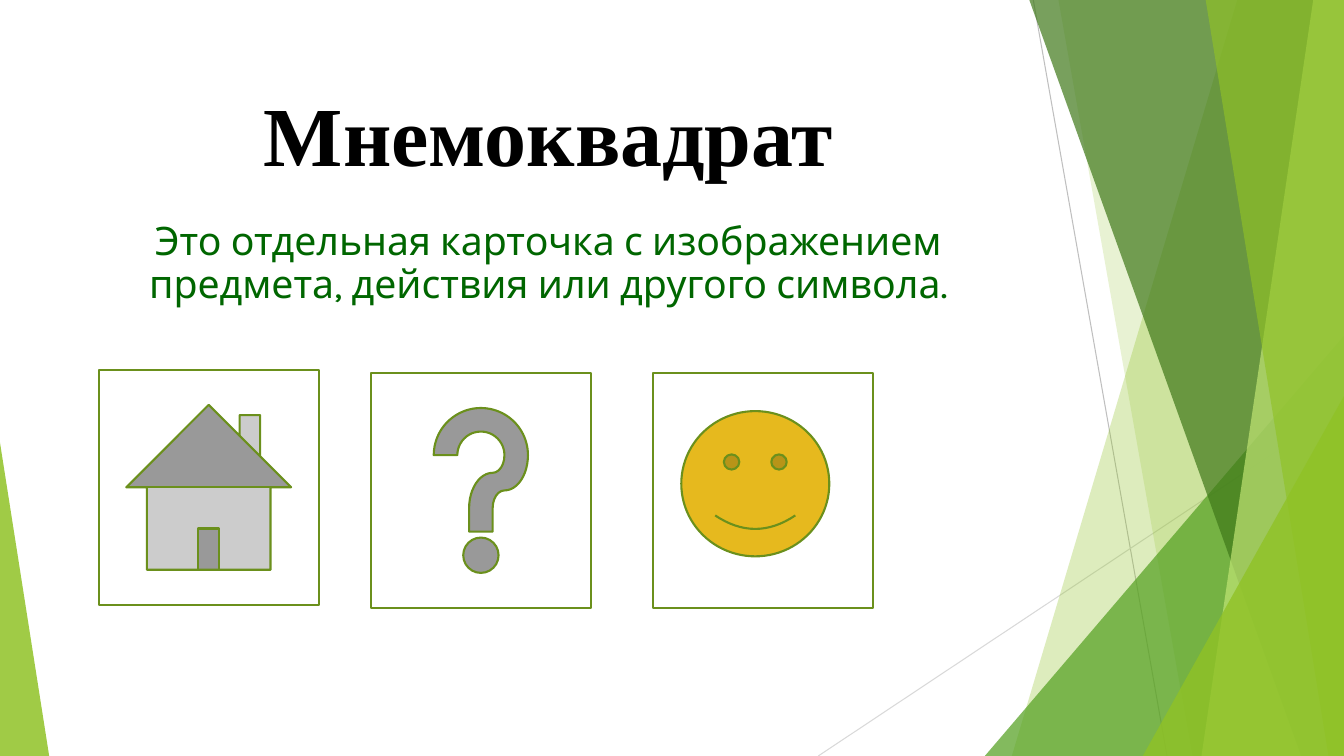
from dataclasses import dataclass

from lxml import etree
from pptx import Presentation
from pptx import util as u
from pptx.dml import color
from pptx.enum import shapes, text
from pptx.oxml import ns
from pptx.shapes.autoshape import Shape
from pptx.slide import Slide

WIDTH, HEIGHT = 33.87, 19.05
TOP = -0.03
COLORS = {
    "white": "FFFFFF",
    "black": "000000",
    "dark_green": "006600",
    "outline": "6B901C",
    "yellow": "E6B91E",
    "lime": "90C226",
    "leaf": "54A021",
    "forest": "3F7819",
    "pale": "C0E474",
    "gray": "BFBFBF",
    "light_gray": "D9D9D9",
}


@dataclass
class Ray:
    start: tuple[float, float]
    end: tuple[float, float]
    color: str


@dataclass
class Panel:
    top_x: float
    bottom_x: float
    color: str
    opacity: int


@dataclass
class Wedge:
    left: float
    top: float
    width: float
    apex: float
    color: str
    opacity: int


@dataclass
class Symbol:
    kind: shapes.MSO_SHAPE
    left: float
    top: float
    width: float
    height: float
    color: str


RAYS = [
    Ray((26.04, 0), (29.41, HEIGHT), "gray"),
    Ray((WIDTH, 10.24), (20.62, HEIGHT), "light_gray"),
]
FACETS = [
    Panel(31.19, 25.5, "lime", 30),
    Panel(26.67, 30.05, "lime", 20),
    Wedge(24.82, 8.46, 9.05, 1, "leaf", 72),
    Panel(25.93, 32.79, "forest", 70),
    Panel(33.1, 30.28, "pale", 70),
    Panel(30.38, 33.48, "lime", 65),
    Wedge(28.8, 9.98, 5.07, 1, "lime", 80),
    Wedge(0, 11.15, 1.24, 0, "lime", 85),
]
CARD_SIZE = (5.54, 5.92)
SYMBOLS = [
    Symbol(shapes.MSO_SHAPE.ACTION_BUTTON_HOME, 2.49, 9.32, *CARD_SIZE, "white"),
    Symbol(shapes.MSO_SHAPE.ACTION_BUTTON_HELP, 9.35, 9.4, *CARD_SIZE, "white"),
    Symbol(shapes.MSO_SHAPE.ACTION_BUTTON_CUSTOM, 16.46, 9.4, *CARD_SIZE, "white"),
    Symbol(shapes.MSO_SHAPE.SMILEY_FACE, 17.17, 10.36, 3.73, 3.66, "yellow"),
]


def rgb(name: str) -> color.RGBColor:
    return color.RGBColor.from_string(COLORS[name])


def paint(shape: Shape, fill: str, opacity: int = 100) -> None:
    shape.shadow.inherit = False
    shape.fill.solid()
    shape.fill.fore_color.rgb = rgb(fill)
    if opacity < 100:
        tint = shape.element.spPr.find(".//" + ns.qn("a:srgbClr"))
        etree.SubElement(tint, ns.qn("a:alpha"), val=str(opacity * 1000))
    shape.line.fill.background()


def draw_ray(slide: Slide, ray: Ray) -> None:
    ends = [u.Cm(value) for value in (*ray.start, *ray.end)]
    connector = slide.shapes.add_connector(shapes.MSO_CONNECTOR.STRAIGHT, *ends)
    connector.line.color.rgb = rgb(ray.color)
    connector.line.width = u.Pt(0.75)
    etree.SubElement(connector.element.spPr, ns.qn("a:effectLst"))


def draw_panel(slide: Slide, panel: Panel) -> None:
    corners = [(WIDTH, TOP), (WIDTH, HEIGHT), (panel.bottom_x, HEIGHT)]
    builder = slide.shapes.build_freeform(u.Cm(panel.top_x), u.Cm(TOP))
    builder.add_line_segments([(u.Cm(x), u.Cm(y)) for x, y in corners])
    paint(builder.convert_to_shape(), panel.color, panel.opacity)


def draw_wedge(slide: Slide, wedge: Wedge) -> None:
    shape = slide.shapes.add_shape(
        shapes.MSO_SHAPE.ISOSCELES_TRIANGLE,
        u.Cm(wedge.left), u.Cm(wedge.top),
        u.Cm(wedge.width), u.Cm(HEIGHT - wedge.top),
    )
    shape.adjustments[0] = wedge.apex
    paint(shape, wedge.color, wedge.opacity)


def draw_symbol(slide: Slide, symbol: Symbol) -> None:
    shape = slide.shapes.add_shape(
        symbol.kind, u.Cm(symbol.left), u.Cm(symbol.top),
        u.Cm(symbol.width), u.Cm(symbol.height),
    )
    paint(shape, symbol.color)
    shape.line.color.rgb = rgb("outline")
    shape.line.width = u.Pt(1.5)


def add_text(slide: Slide, words: str, *, top: float, height: float, font: str,
             size: float, fill: str, bold: bool = False, inset: float = 0.13,
             before: float = 0, spacing: float = 1) -> None:
    box = slide.shapes.add_textbox(u.Cm(1.88), u.Cm(top), u.Cm(23.88), u.Cm(height))
    frame = box.text_frame
    frame.word_wrap = True
    frame.vertical_anchor = text.MSO_ANCHOR.TOP
    frame.margin_top = u.Cm(inset)
    paragraph = frame.paragraphs[0]
    paragraph.alignment = text.PP_ALIGN.CENTER
    paragraph.space_before = u.Pt(before)
    paragraph.line_spacing = spacing
    run = paragraph.add_run()
    run.text = words
    run.font.name = font
    run.font.size = u.Pt(size)
    run.font.bold = bold
    run.font.color.rgb = rgb(fill)


def main() -> None:
    presentation = Presentation()
    presentation.slide_width = u.Cm(WIDTH)
    presentation.slide_height = u.Cm(HEIGHT)
    slide = presentation.slides.add_slide(presentation.slide_layouts[6])
    for ray in RAYS:
        draw_ray(slide, ray)
    for facet in FACETS:
        if isinstance(facet, Panel):
            draw_panel(slide, facet)
        else:
            draw_wedge(slide, facet)
    add_text(slide, "Мнемоквадрат", top=1.7, height=3.66, font="Times New Roman",
             size=60, fill="black", bold=True, inset=0.39)
    add_text(slide, "Это отдельная карточка с изображением предмета, "
             "действия или другого символа.", top=5.46, height=10.77,
             font="Karla", size=28, fill="dark_green", before=10, spacing=0.9)
    for symbol in SYMBOLS:
        draw_symbol(slide, symbol)
    presentation.save("out.pptx")


if __name__ == "__main__":
    main()
